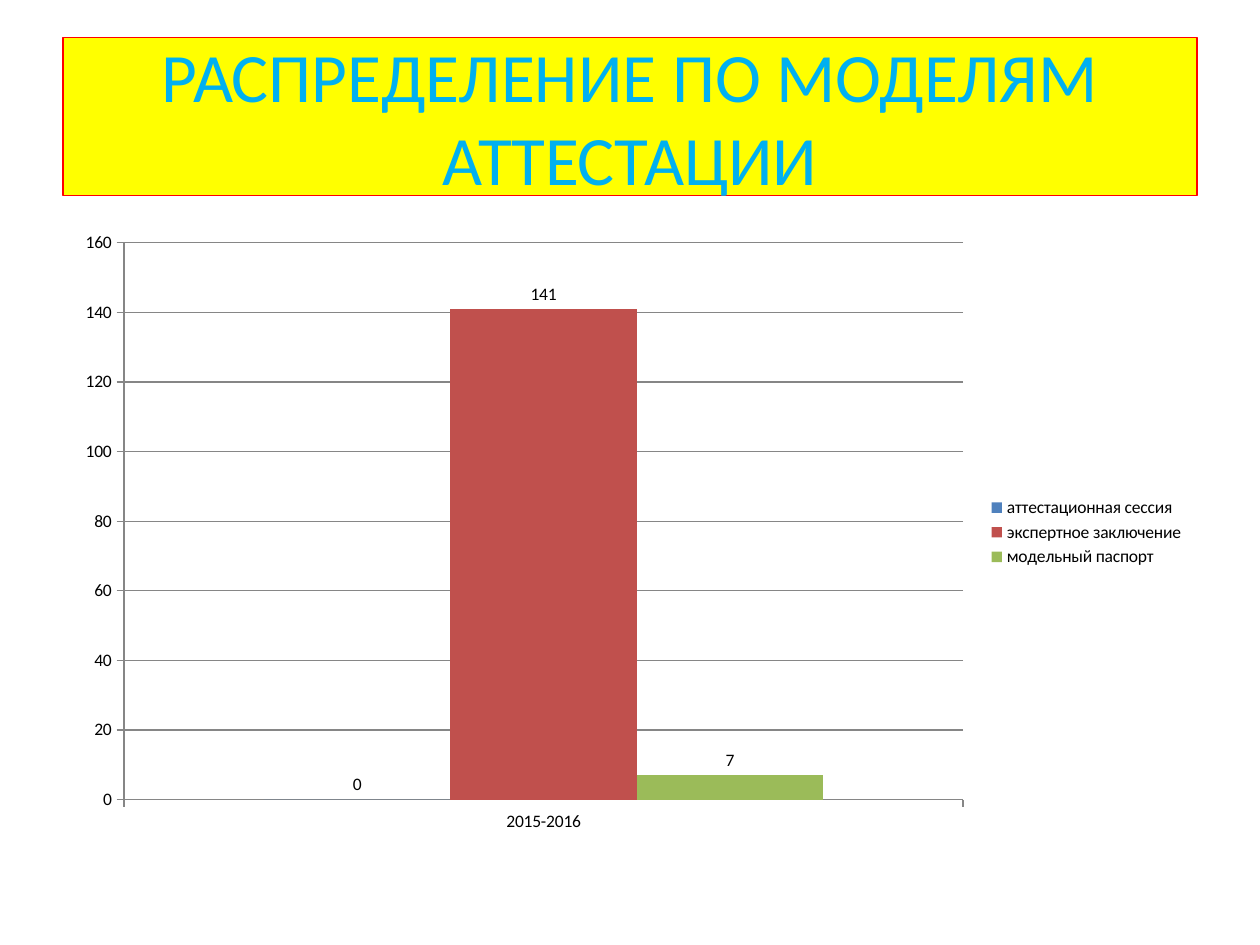
from dataclasses import dataclass

from pptx import Presentation
from pptx.chart.data import CategoryChartData
from pptx.dml.color import RGBColor
from pptx.enum.chart import XL_CHART_TYPE, XL_LABEL_POSITION, XL_LEGEND_POSITION, XL_TICK_MARK
from pptx.enum.text import MSO_ANCHOR, MSO_AUTO_SIZE, PP_ALIGN
from pptx.util import Inches, Pt

COLUMNS = XL_CHART_TYPE.COLUMN_CLUSTERED
LABEL_ABOVE = XL_LABEL_POSITION.OUTSIDE_END
LEGEND_RIGHT = XL_LEGEND_POSITION.RIGHT
TICK_OUTSIDE = XL_TICK_MARK.OUTSIDE
TITLE_ONLY_LAYOUT = 5


@dataclass(frozen=True)
class Theme:
    font: str = "Calibri"
    title_size: float = 39.6
    chart_size: float = 10
    title_color: str = "00B0F0"
    title_fill: str = "FFFF00"
    title_line: str = "FF0000"
    text: str = "000000"
    grid: str = "868686"


THEME = Theme()
PERIOD = "2015-2016"
MODELS = [
    ("аттестационная сессия", 0, "4F81BD"),
    ("экспертное заключение", 141, "C0504D"),
    ("модельный паспорт", 7, "9BBB59"),
]


def rgb(color):
    return RGBColor.from_string(color)


def set_font(font, size, color):
    values = {"name": THEME.font, "size": Pt(size), "bold": False}
    for name, value in values.items():
        setattr(font, name, value)
    font.color.rgb = rgb(color)


def set_line(line, color):
    line.color.rgb = rgb(color)
    line.width = Pt(0.75)


def place_title(title, text):
    title.left, title.top = Inches(0.5), Inches(0.3)
    title.width, title.height = Inches(9), Inches(1.25)
    title.fill.solid()
    title.fill.fore_color.rgb = rgb(THEME.title_fill)
    set_line(title.line, THEME.title_line)
    frame_format = {
        "word_wrap": True,
        "auto_size": MSO_AUTO_SIZE.NONE,
        "vertical_anchor": MSO_ANCHOR.MIDDLE,
    }
    for name, value in frame_format.items():
        setattr(title.text_frame, name, value)
    para = title.text_frame.paragraphs[0]
    para.alignment = PP_ALIGN.CENTER
    span = para.add_run()
    span.text = text
    set_font(span.font, THEME.title_size, THEME.title_color)


def style_axes(chart):
    for axis in (chart.category_axis, chart.value_axis):
        axis.major_tick_mark = TICK_OUTSIDE
        set_line(axis.format.line, THEME.grid)
    scale = {
        "minimum_scale": 0,
        "maximum_scale": 160,
        "major_unit": 20,
        "has_major_gridlines": True,
    }
    for name, value in scale.items():
        setattr(chart.value_axis, name, value)
    set_line(chart.value_axis.major_gridlines.format.line, THEME.grid)


def style_series(series, color):
    series.format.fill.solid()
    series.format.fill.fore_color.rgb = rgb(color)
    labels = series.data_labels
    labels.show_value = True
    labels.position = LABEL_ABOVE


def add_model_chart(page):
    data = CategoryChartData()
    data.categories = [PERIOD]
    for name, count, _ in MODELS:
        data.add_series(name, [count])
    chart = page.shapes.add_chart(
        COLUMNS, Inches(0.5), Inches(1.75), Inches(9), Inches(4.95), data
    ).chart
    set_font(chart.font, THEME.chart_size, THEME.text)
    chart.has_title = False
    chart.has_legend = True
    chart.legend.position = LEGEND_RIGHT
    chart.legend.include_in_layout = False
    plot = chart.plots[0]
    plot.vary_by_categories = False
    plot.gap_width, plot.overlap = 150, 0
    style_axes(chart)
    for series, (_, _, color) in zip(plot.series, MODELS):
        style_series(series, color)


def main():
    deck = Presentation()
    deck.slide_width, deck.slide_height = Inches(10), Inches(7.5)
    page = deck.slides.add_slide(deck.slide_layouts[TITLE_ONLY_LAYOUT])
    place_title(page.shapes.title, "РАСПРЕДЕЛЕНИЕ ПО МОДЕЛЯМ АТТЕСТАЦИИ")
    add_model_chart(page)
    deck.save("out.pptx")


if __name__ == "__main__":
    main()
